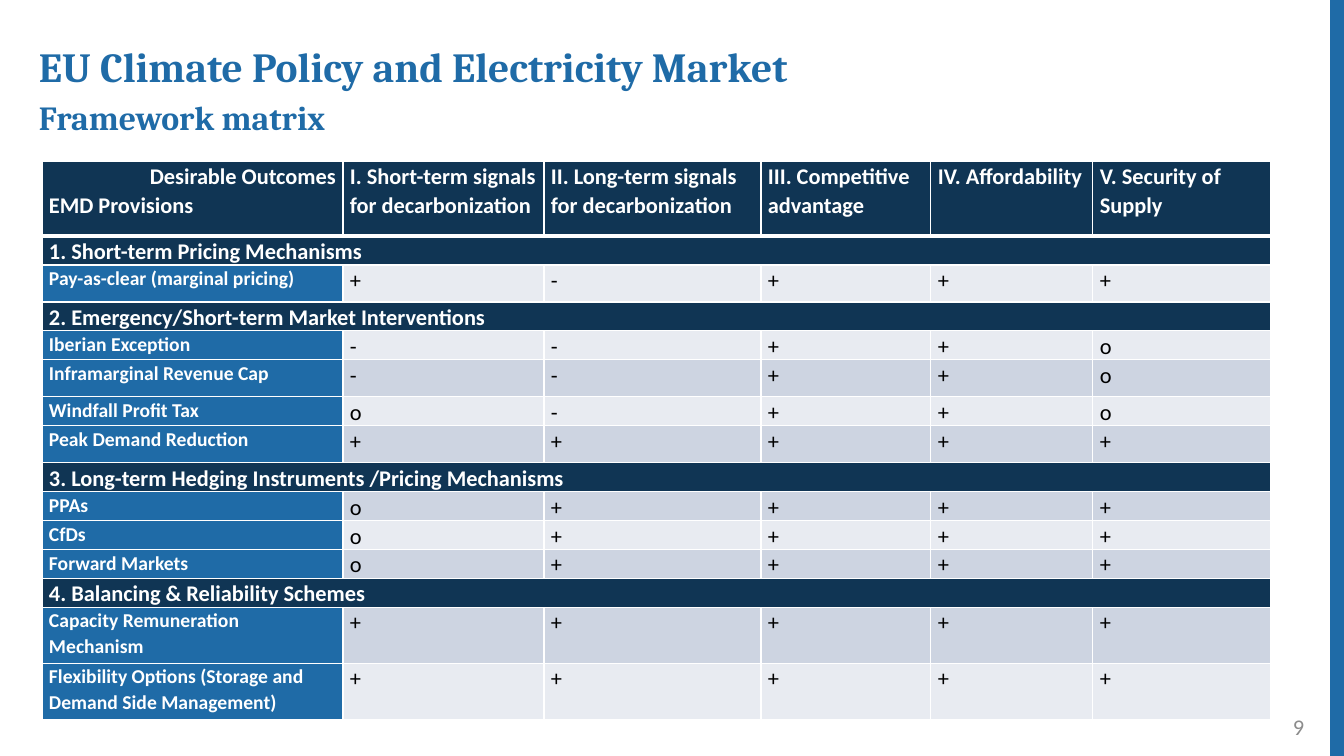
from dataclasses import dataclass

from lxml.etree import SubElement
from pptx import Presentation
from pptx.dml.color import RGBColor
from pptx.enum.shapes import MSO_CONNECTOR
from pptx.enum.text import MSO_ANCHOR, PP_ALIGN
from pptx.oxml.ns import qn
from pptx.util import Emu, Pt

SCALE = 12192000 / 1344


@dataclass(frozen=True)
class Theme:
    navy: str = "103554"
    blue: str = "1F6BA7"
    light: str = "E8EBF1"
    dim: str = "CDD4E1"
    white: str = "FFFFFF"
    black: str = "000000"
    gray: str = "8C8C8C"
    head: str = "Cambria"
    body: str = "Calibri"
    title: float = 29.6
    sub: float = 24.1
    text: int = 16
    label: int = 14


def px(size):
    return Emu(round(size * SCALE))


def put(frame, text, size, color, font, bold=False, align=PP_ALIGN.LEFT, space=1.0, before=0):
    first = frame.paragraphs[0]
    para = frame.add_paragraph() if first.runs else first
    para.alignment = align
    para.line_spacing = space
    para.space_before = Pt(before)
    run = para.add_run()
    run.text = text
    run.font.size = Pt(size)
    run.font.name = font
    run.font.bold = bold
    run.font.color.rgb = RGBColor.from_string(color)


class Deck:
    """Draws elements on the current slide in one theme."""

    def __init__(self, theme):
        self.theme = theme
        self.show = Presentation()
        self.show.slide_width, self.show.slide_height = px(1344), px(756)
        self.slide = self.show.slides.add_slide(self.show.slide_layouts[6])

    def line(self, x1, y1, x2, y2, color, width):
        line = self.slide.shapes.add_connector(MSO_CONNECTOR.STRAIGHT, px(x1), px(y1), px(x2), px(y2))
        line.line.color.rgb = RGBColor.from_string(color)
        line.line.width = Pt(width)
        SubElement(line._element.spPr, qn("a:effectLst"))

    def box(self, x, y, wide, high, anchor=MSO_ANCHOR.TOP):
        frame = self.slide.shapes.add_textbox(px(x), px(y), px(wide), px(high)).text_frame
        frame.word_wrap = True
        frame.vertical_anchor = anchor
        return frame

    def grid(self, x, y, wides, highs):
        shape = self.slide.shapes.add_table(len(highs), len(wides), px(x), px(y), px(sum(wides)), px(sum(highs)))
        table = shape.table
        for col, wide in zip(table.columns, wides):
            col.width = px(wide)
        for row, high in zip(table.rows, highs):
            row.height = px(high)
        return table

    def cell(self, cell, text, fill, top=1, base=1, **form):
        cell.margin_left = cell.margin_right = px(7)
        cell.margin_top = cell.margin_bottom = 0
        props = cell._tc.get_or_add_tcPr()
        for side, width in (("L", 1), ("R", 1), ("T", top), ("B", base)):
            edge = SubElement(props, qn(f"a:ln{side}"), w=str(Pt(width)))
            paint = SubElement(edge, qn("a:solidFill"))
            SubElement(paint, qn("a:srgbClr"), val=self.theme.white)
        cell.fill.solid()
        cell.fill.fore_color.rgb = RGBColor.from_string(fill)
        style = dict(size=self.theme.text, color=self.theme.white, font=self.theme.body, bold=True, space=1.07)
        put(cell.text_frame, text, **{**style, **form})

    def save(self):
        self.show.save("out.pptx")


HEADS = [
    "EMD Provisions",
    "I. Short-term signals for decarbonization",
    "II. Long-term signals for decarbonization",
    "III. Competitive advantage",
    "IV. Affordability",
    "V. Security of Supply",
]
ROWS = [
    ("1. Short-term Pricing Mechanisms", "", 29),
    ("Pay-as-clear (marginal pricing)", "+-+++", 37),
    ("2. Emergency/Short-term Market Interventions", "", 29),
    ("Iberian Exception", "--++o", 29),
    ("Inframarginal Revenue Cap", "--++o", 37),
    ("Windfall Profit Tax", "o-++o", 29),
    ("Peak Demand Reduction", "+++++", 37),
    ("3. Long-term Hedging Instruments /Pricing Mechanisms", "", 29),
    ("PPAs", "o++++", 29),
    ("CfDs", "o++++", 29),
    ("Forward Markets", "o++++", 29),
    ("4. Balancing & Reliability Schemes", "", 29),
    ("Capacity Remuneration Mechanism", "+++++", 56),
    ("Flexibility Options (Storage and Demand Side Management)", "+++++", 56),
]


def matrix(deck):
    theme = deck.theme
    wides = [301, 201, 217, 170, 162, 178]
    table = deck.grid(42, 161, wides, [75] + [high for _, _, high in ROWS])
    for col, head in enumerate(HEADS):
        cell = table.cell(0, col)
        if col == 0:
            deck.cell(cell, "Desirable Outcomes", theme.navy, base=3, align=PP_ALIGN.RIGHT)
            put(cell.text_frame, head, theme.text, theme.white, theme.body, bold=True, space=1.07)
        else:
            deck.cell(cell, head, theme.navy, base=3)
    for row, (name, marks, _) in enumerate(ROWS, 1):
        top = 3 if row == 1 else 1
        if marks:
            deck.cell(table.cell(row, 0), name, theme.blue, size=theme.label)
            band = theme.dim if row % 2 else theme.light
            for col, mark in enumerate(marks, 1):
                deck.cell(table.cell(row, col), mark, band, color=theme.black, bold=False)
        else:
            for col in range(len(wides)):
                deck.cell(table.cell(row, col), "" if col else name, theme.navy, top=top)
            table.cell(row, 0).merge(table.cell(row, len(wides) - 1))


def main():
    theme = Theme()
    deck = Deck(theme)
    deck.line(1338, 0, 1338, 756, theme.blue, 12)
    page = deck.box(1012, 707, 302, 40, MSO_ANCHOR.MIDDLE)
    put(page, "9", theme.text, theme.gray, theme.body, align=PP_ALIGN.RIGHT)
    title = deck.box(29, 46, 1206, 102)
    put(title, "EU Climate Policy and Electricity Market", theme.title, theme.blue, theme.head, bold=True, space=0.8)
    put(title, "Framework matrix", theme.sub, theme.blue, theme.head, bold=True, space=0.8, before=10)
    matrix(deck)
    deck.save()


if __name__ == "__main__":
    main()
